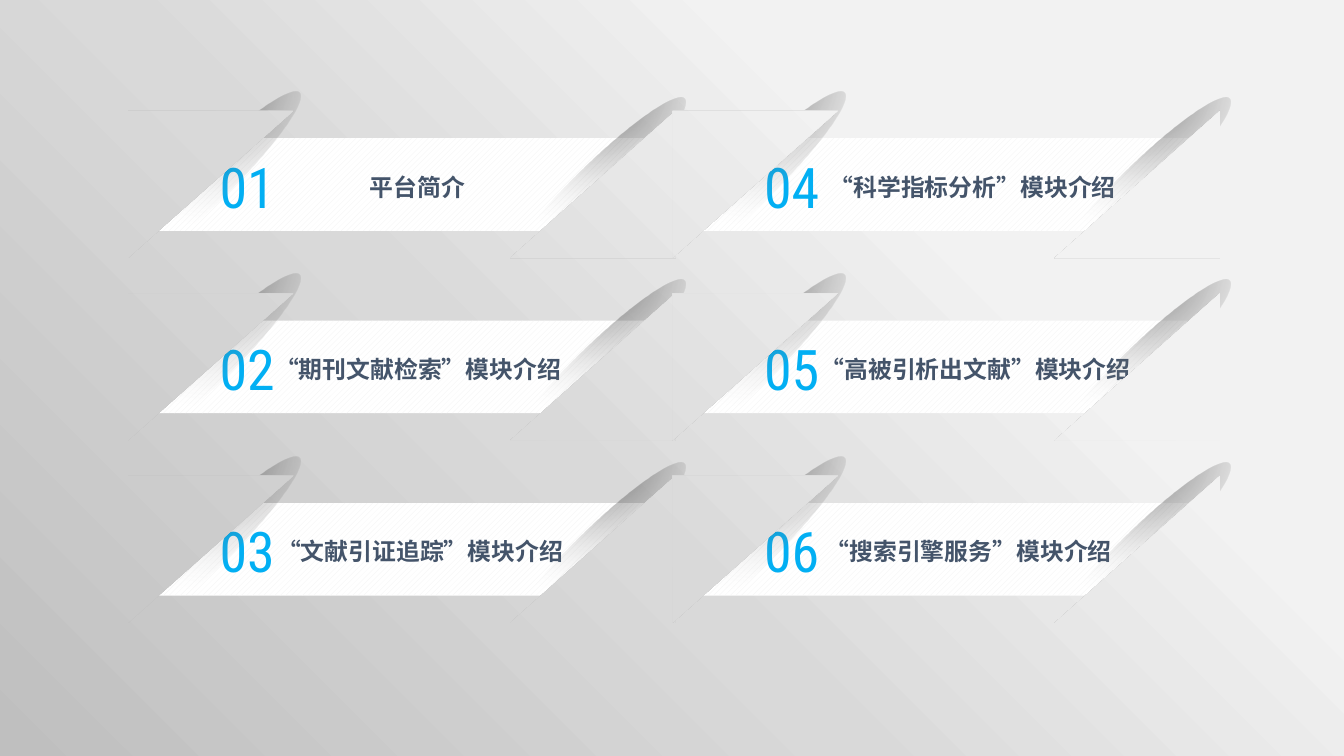
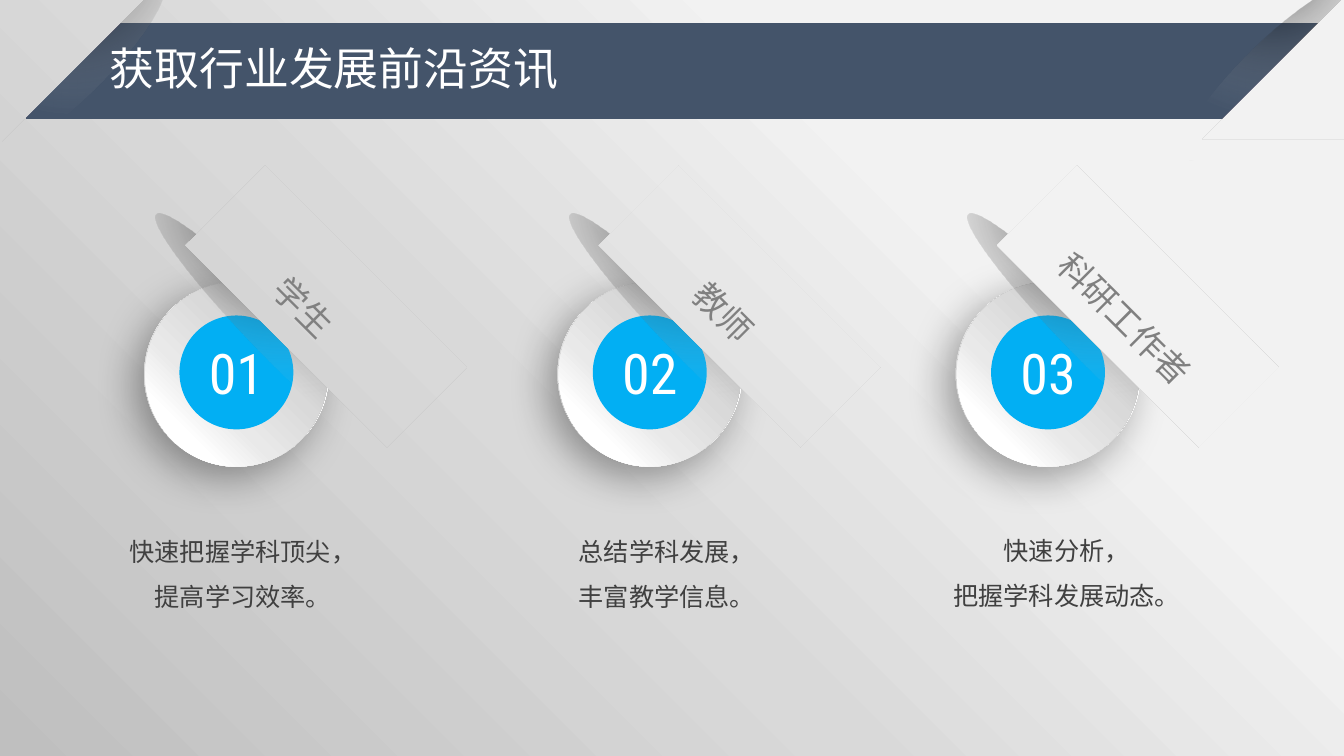
from dataclasses import dataclass

from lxml import etree
from pptx import Presentation
from pptx.dml.color import RGBColor
from pptx.enum.dml import MSO_PATTERN
from pptx.enum.shapes import MSO_SHAPE
from pptx.enum.text import MSO_ANCHOR, MSO_AUTO_SIZE, PP_ALIGN
from pptx.oxml.ns import qn
from pptx.util import Inches, Pt

RECT, OVAL, TRIANGLE = MSO_SHAPE.RECTANGLE, MSO_SHAPE.OVAL, MSO_SHAPE.RIGHT_TRIANGLE
LEFT, CENTER, RIGHT = PP_ALIGN.LEFT, PP_ALIGN.CENTER, PP_ALIGN.RIGHT
STRIPES = MSO_PATTERN.WIDE_UPWARD_DIAGONAL
MIDDLE = MSO_ANCHOR.MIDDLE
FIT = MSO_AUTO_SIZE.SHAPE_TO_FIT_TEXT

CJK, DIGITS = "Noto Sans CJK SC", "Roboto Condensed"
NAVY, BLUE, WHITE, PALE = "44546A", "02AFF3", "FFFFFF", "F2F2F2"
GREY, DARK = "808080", "404040"


@dataclass
class Gradient:
    stops: list[tuple[int, str, int]]
    focus: tuple[int, int, int, int]


@dataclass
class Font:
    name: str
    size: int
    color: str
    bold: bool = False
    outline: str = ""


@dataclass
class Card:
    title: str
    x: float
    w: float


@dataclass
class Audience:
    x: float
    label: str
    label_box: tuple[float, float, float, float]
    caption: list[str]
    caption_box: tuple[float, float, float, float]
    align: PP_ALIGN = CENTER


TOP_RIGHT, BOTTOM_LEFT, BELOW = (100, 0, 0, 100), (0, 100, 100, 0), (50, -80, 50, 180)
BACKDROP = Gradient([(9, PALE, 100), (29, PALE, 100), (59, "D9D9D9", 100),
                     (100, "BFBFBF", 100)], TOP_RIGHT)
RIM = Gradient([(0, WHITE, 100), (35, WHITE, 100), (100, "BFBFBF", 100)], TOP_RIGHT)
RING = Gradient([(0, WHITE, 100), (20, WHITE, 100), (37, "E9E9E9", 100),
                 (61, "D9D9D9", 100), (95, "A6A6A6", 100)], BOTTOM_LEFT)
SOFT = Gradient([(0, DARK, 40), (32, "000000", 30), (100, "E7E6E6", 0)], BELOW)
DEEP = Gradient([(0, DARK, 50), (32, "000000", 40), (100, "E7E6E6", 0)], BELOW)

NUMBER = Font(DIGITS, 40, BLUE, outline=WHITE)
DISC_NUMBER = Font(DIGITS, 40, WHITE)
CARD_TITLE = Font(CJK, 17, NAVY, bold=True)
SLIDE_TITLE = Font(CJK, 32, WHITE)
LABEL = Font(CJK, 24, GREY)
CAPTION = Font(CJK, 18, DARK)

CARDS = [
    Card("平台简介", 3.57, 1.16),
    Card("“期刊文献检索”模块介绍", 2.63, 3.06),
    Card("“文献引证追踪”模块介绍", 2.65, 3.06),
    Card("“科学指标分析”模块介绍", 8.13, 3.06),
    Card("“高被引析出文献”模块介绍", 8.04, 3.3),
    Card("“搜索引擎服务”模块介绍", 8.09, 3.06),
]
CARD_ROWS, CARD_DX, CARD_DY = 3, 5.4, 1.81

AUDIENCES = [
    Audience(1.43, "学生", (2.57, 2.79, 0.88, 0.5),
             ["快速把握学科顶尖，", "提高学习效率。"], (0.78, 5.12, 3.26, 0.96)),
    Audience(5.53, "教师", (6.73, 2.84, 0.88, 0.5),
             ["总结学科发展，", "丰富教学信息。"], (5.64, 5.12, 2.78, 0.96), LEFT),
    Audience(9.48, "科研工作者", (10.21, 2.9, 1.88, 0.5),
             ["快速分析，", "把握学科发展动态。"], (8.95, 5.11, 3.26, 0.96)),
]


def rgb(color: str) -> RGBColor:
    return RGBColor.from_string(color)


def add_color(parent, color: str, alpha: int = 100):
    clr = etree.SubElement(parent, qn("a:srgbClr"), val=color)
    if alpha < 100:
        etree.SubElement(clr, qn("a:alpha"), val=str(alpha * 1000))


def set_gradient(fill, holder, gradient: Gradient):
    fill.background()
    grad = etree.Element(qn("a:gradFill"), rotWithShape="1")
    stops = etree.SubElement(grad, qn("a:gsLst"))
    for pos, color, alpha in gradient.stops:
        add_color(etree.SubElement(stops, qn("a:gs"), pos=str(pos * 1000)), color, alpha)
    radial = etree.SubElement(grad, qn("a:path"), {"path": "circle"})
    sides = {k: str(v * 1000) for k, v in zip("ltrb", gradient.focus)}
    etree.SubElement(radial, qn("a:fillToRect"), sides)
    holder.replace(holder.find(qn("a:noFill")), grad)


def new_slide(prs):
    s = prs.slides.add_slide(prs.slide_layouts[6])
    fill = s.background.fill
    fill.background()
    set_gradient(fill, s._element.find(".//" + qn("p:bgPr")), BACKDROP)
    return s


def add_shape(s, kind, x: float, y: float, w: float, h: float,
              fill: str | Gradient | None = None, rotation: float = 0):
    sp = s.shapes.add_shape(kind, Inches(x), Inches(y), Inches(w), Inches(h))
    sp.rotation = rotation
    sp.shadow.inherit = False
    sp.line.fill.background()
    if isinstance(fill, Gradient):
        set_gradient(sp.fill, sp._element.spPr, fill)
    elif fill:
        sp.fill.solid()
        sp.fill.fore_color.rgb = rgb(fill)
    else:
        sp._element.set("useBgFill", "1")
    return sp


def write(tf, lines: list[str], font: Font, align=LEFT, spacing: float | None = None):
    for i, line in enumerate(lines):
        p = tf.add_paragraph() if i else tf.paragraphs[0]
        p.text = line
        p.alignment = align
        if spacing:
            p.line_spacing = spacing
        p.font.name = font.name
        p.font.size = Pt(font.size)
        p.font.bold = font.bold
        p.font.color.rgb = rgb(font.color)
        props = p._p.pPr.find(qn("a:defRPr"))
        props.find(qn("a:latin")).addnext(etree.Element(qn("a:ea"), typeface=font.name))
        if font.outline:
            ln = etree.Element(qn("a:ln"), w=str(Pt(2.25)))
            add_color(etree.SubElement(ln, qn("a:solidFill")), font.outline)
            props.insert(0, ln)


def add_text(s, box: tuple[float, float, float, float], lines: list[str], font: Font,
             align=LEFT, rotation: float = 0, wrap: bool = False,
             spacing: float | None = None):
    sp = s.shapes.add_textbox(*map(Inches, box))
    sp.rotation = rotation
    tf = sp.text_frame
    tf.word_wrap = wrap
    tf.auto_size = FIT
    write(tf, lines, font, align, spacing)


def add_drop_shadow(sp):
    effects = sp._element.spPr.find(qn("a:effectLst"))
    shadow = etree.SubElement(effects, qn("a:outerShdw"), blurRad=str(Pt(29)),
                              dist=str(Pt(11)), dir=str(133 * 60000), rotWithShape="0")
    add_color(shadow, "000000", 35)


def add_corner(s, shade: tuple[float, float, float, float],
               triangle: tuple[float, float, float, float], rotation: int):
    add_shape(s, OVAL, *shade, SOFT, (rotation + 225.5) % 360)
    add_shape(s, TRIANGLE, *triangle, rotation=rotation)


def add_card(s, index: int, card: Card):
    col, row = divmod(index, CARD_ROWS)
    dx, dy = col * CARD_DX, row * CARD_DY
    band = add_shape(s, RECT, 1.44 + dx, 1.37 + dy, 4.99, 0.92, WHITE)
    band.fill.patterned()
    band.fill.pattern = STRIPES
    band.fill.fore_color.rgb = rgb(PALE)
    band.fill.back_color.rgb = rgb(WHITE)
    add_text(s, (card.x, 1.66 + dy, card.w, 0.39), [card.title], CARD_TITLE)
    add_text(s, (2.08 + dx, 1.46 + dy, 0.8, 0.77), [f"{index + 1:02}"], NUMBER)
    add_corner(s, (0.82 + dx, 1.59 + dy, 2.51, 0.42), (1.36 + dx, 1.01 + dy, 1.46, 1.64), 90)
    add_corner(s, (4.64 + dx, 1.65 + dy, 2.51, 0.42), (5.15 + dx, 1.01 + dy, 1.46, 1.64), 270)


def add_title_band(s, title: str):
    add_shape(s, RECT, 0.26, 0.23, 13.07, 0.95, NAVY)
    add_corner(s, (-0.51, 0.39, 2.47, 0.59), (0.02, 0, 1.4, 1.4), 90)
    add_corner(s, (11.39, 0.41, 2.47, 0.59), (11.93, -0.02, 1.4, 1.4), 270)
    add_text(s, (0.99, 0.36, 4.69, 0.64), [title], SLIDE_TITLE)


def add_audience(s, number: int, a: Audience):
    add_drop_shadow(add_shape(s, OVAL, a.x, 2.8, 1.83, 1.83, RIM))
    add_shape(s, OVAL, a.x + 0.01, 2.8, 1.81, 1.83, RING)
    disc = add_shape(s, OVAL, a.x + 0.35, 3.13, 1.13, 1.13, BLUE)
    disc.text_frame.word_wrap = False
    disc.text_frame.vertical_anchor = MIDDLE
    write(disc.text_frame, [f"{number:02}"], DISC_NUMBER, CENTER)
    add_shape(s, OVAL, a.x - 0.4, 3.16, 3.52, 0.45, DEEP, 45.5)
    add_shape(s, RECT, a.x + 0.39, 2.48, 2.83, 1.12, rotation=45)
    add_text(s, a.label_box, [a.label], LABEL, RIGHT, rotation=45)
    add_text(s, a.caption_box, a.caption, CAPTION, a.align, wrap=True, spacing=1.5)


def main():
    prs = Presentation()
    prs.slide_width, prs.slide_height = Inches(13.33), Inches(7.5)

    s = new_slide(prs)
    for i, card in enumerate(CARDS):
        add_card(s, i, card)

    s = new_slide(prs)
    add_title_band(s, "获取行业发展前沿资讯")
    for number, audience in enumerate(AUDIENCES, 1):
        add_audience(s, number, audience)

    prs.save("out.pptx")


if __name__ == "__main__":
    main()
